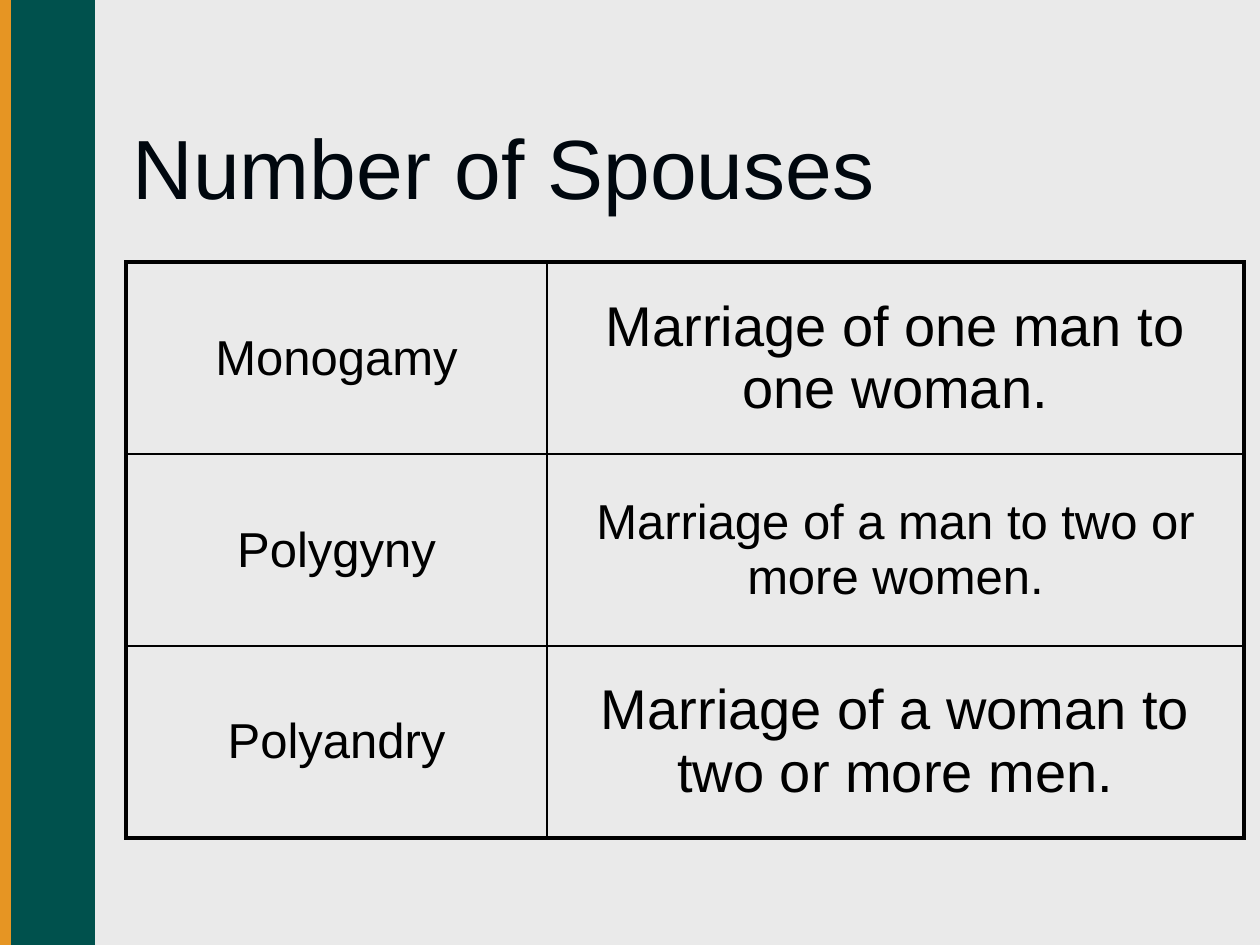
from dataclasses import dataclass

from lxml.etree import SubElement
from pptx import Presentation
from pptx.dml.color import RGBColor as RGB
from pptx.enum.shapes import MSO_SHAPE as SHAPE
from pptx.enum.text import MSO_ANCHOR as ANCHOR, PP_ALIGN as ALIGN
from pptx.oxml.ns import qn
from pptx.util import Emu, Pt


@dataclass(frozen=True)
class Theme:
    font: str = "Arial"
    background: str = "EAEAEA"
    band: str = "00514D"
    accent: str = "E69523"
    title: str = "00070E"
    ink: str = "000000"
    title_size: int = 48
    large: int = 32
    body: int = 28
    outer: float = 2.25
    inner: float = 1


def px(n):
    return Emu(round(n * 914400 / 126))


def apply(obj, fmt):
    for name, value in fmt.items():
        setattr(obj, name, value)


class Deck:
    """Draws styled elements on the current slide."""

    def __init__(self, theme):
        self.theme = theme
        self.prs = Presentation()
        apply(self.prs, {"slide_width": px(1260), "slide_height": px(945)})

    def slide(self):
        self.s = self.prs.slides.add_slide(self.prs.slide_layouts[6])
        fill = self.s.background.fill
        fill.solid()
        fill.fore_color.rgb = RGB.from_string(self.theme.background)

    def bar(self, width, color):
        sp = self.s.shapes.add_shape(SHAPE.RECTANGLE, 0, 0, px(width), px(945))
        sp.shadow.inherit = False
        for fill in (sp.fill, sp.line.fill):
            fill.solid()
            fill.fore_color.rgb = RGB.from_string(color)
        sp.line.width = Pt(0.75)

    def text(self, tf, text, size, color, **fmt):
        p = tf.paragraphs[0]
        apply(p, fmt)
        r = p.add_run()
        r.text = text
        apply(r.font, {"name": self.theme.font, "size": Pt(size)})
        r.font.color.rgb = RGB.from_string(color)

    def title(self, text, *box):
        tf = self.s.shapes.add_textbox(*map(px, box)).text_frame
        apply(tf, {"word_wrap": True, "vertical_anchor": ANCHOR.BOTTOM})
        self.text(tf, text, self.theme.title_size, self.theme.title)

    def borders(self, cell, widths):
        tc_pr = cell._tc.get_or_add_tcPr()
        for side, width in widths.items():
            ln = SubElement(tc_pr, qn(f"a:ln{side}"), w=str(int(Pt(width))))
            fill = SubElement(ln, qn("a:solidFill"))
            SubElement(fill, qn("a:srgbClr"), val=self.theme.ink)

    def table(self, rows, left, top, col_widths, row_height):
        t = self.theme
        last_row, last_col = len(rows) - 1, len(col_widths) - 1
        frame = self.s.shapes.add_table(
            len(rows), len(col_widths), px(left), px(top),
            px(sum(col_widths)), px(row_height * len(rows)))
        table = frame.table
        apply(table, {"first_row": False, "horz_banding": False})
        for col, width in zip(table.columns, col_widths):
            col.width = px(width)
        for i, row in enumerate(rows):
            table.rows[i].height = px(row_height)
            for j, (text, size) in enumerate(row):
                cell = table.cell(i, j)
                cell.vertical_anchor = ANCHOR.MIDDLE
                edges = {"L": j == 0, "R": j == last_col,
                         "T": i == 0, "B": i == last_row}
                self.borders(cell, {side: t.outer if edge else t.inner
                                    for side, edge in edges.items()})
                cell.fill.background()
                self.text(cell.text_frame, text, size, t.ink,
                          alignment=ALIGN.CENTER, space_before=Pt(size * 0.2))


def main():
    theme = Theme()
    deck = Deck(theme)
    deck.slide()
    deck.bar(94, theme.band)
    deck.bar(10, theme.accent)
    deck.title("Number of Spouses", 120, 73, 1125, 150)
    rows = [
        [("Monogamy", theme.body),
         ("Marriage of one man to one woman.", theme.large)],
        [("Polygyny", theme.body),
         ("Marriage of a man to two or more women.", theme.body)],
        [("Polyandry", theme.body),
         ("Marriage of a woman to two or more men.", theme.large)],
    ]
    deck.table(rows, 126, 262, (421, 697), 192)
    deck.prs.save("out.pptx")


if __name__ == "__main__":
    main()
